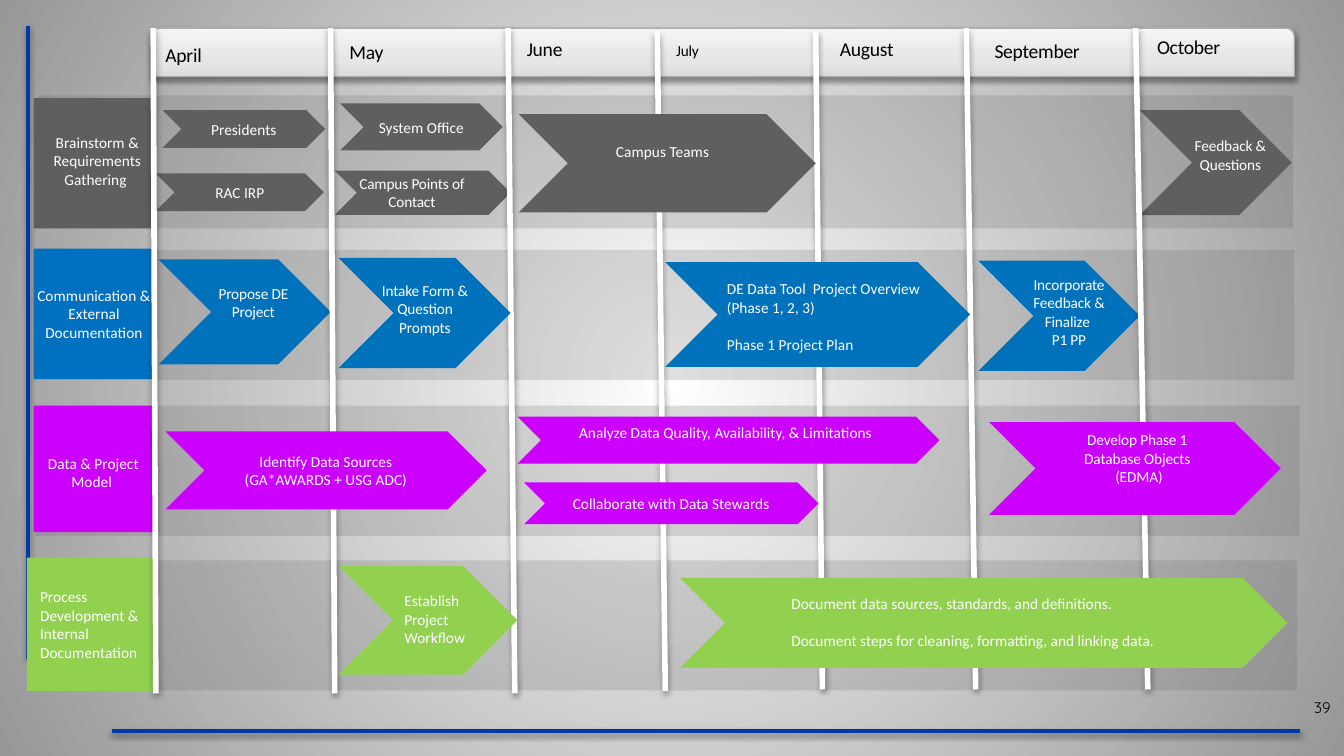
from pptx import Presentation
from pptx.dml.color import RGBColor
from pptx.enum import shapes, text
from pptx.oxml import parse_xml
from pptx.oxml.ns import nsdecls, qn
from pptx.util import Pt

WHITE = RGBColor(0xFF, 0xFF, 0xFF)
BLACK = RGBColor(0, 0, 0)
GREY = RGBColor(0x5F, 0x5F, 0x5F)
BLUE = RGBColor(0x00, 0x72, 0xBC)
LABEL_BLUE = RGBColor(0x00, 0x70, 0xC0)
PURPLE = RGBColor(0xCC, 0x00, 0xFF)
GREEN = RGBColor(0x92, 0xD0, 0x50)
FRAME_BLUE = RGBColor(0x00, 0x38, 0xA8)
HEADER_EDGE = RGBColor(0xAE, 0xAE, 0xAE)

SHAPE = shapes.MSO_SHAPE
LEFT, CENTER, RIGHT = (text.PP_ALIGN.LEFT, text.PP_ALIGN.CENTER, text.PP_ALIGN.RIGHT)
TOP, MIDDLE = text.MSO_ANCHOR.TOP, text.MSO_ANCHOR.MIDDLE
NO_MARGINS = dict.fromkeys(
    ("margin_left", "margin_top", "margin_right", "margin_bottom"), 0)
TIGHT = {"vertical_anchor": MIDDLE, "word_wrap": True, **NO_MARGINS}
TIGHT_TOP = {**TIGHT, "vertical_anchor": TOP}
LOOSE = {"vertical_anchor": TOP, "word_wrap": True}
LOOSE_MIDDLE = {**LOOSE, "vertical_anchor": MIDDLE}
NO_WRAP = {**TIGHT, "word_wrap": False}
BODY_SIZE = 8.25
LINE_HEIGHT = 10

# Row band, label block, label frame, label colour, label, alignment, frame format
ROWS = [
    ((20.2, 51.1, 672.5, 71.3), (18, 52.6, 64.1, 69.8), (20.9, 51.1, 62.6, 69.8),
     GREY, "Brainstorm & Requirements Gathering ", CENTER, TIGHT),
    ((18, 133.9, 675.4, 69.8), (18, 133.2, 64.8, 69.8), None,
     LABEL_BLUE, "Communication & External Documentation", CENTER, TIGHT),
    ((18.7, 217.4, 677.5, 69.8), (18, 217.4, 66.2, 67.7), (18, 229, 64.1, 48.2),
     PURPLE, "Data & Project Model ", CENTER, TIGHT),
    ((17.3, 300.2, 677.5, 69.8), (14.4, 298.8, 67.7, 71.3), None,
     GREEN, "Process Development & Internal Documentation", LEFT, LOOSE_MIDDLE),
]

# Name, frame, size
MONTHS = [
    ("April", (88.6, 22.3, 22.3, 14.4), 10.5),
    ("May", (187.2, 20.9, 18.7, 13.7), 10.5),
    ("June", (282.2, 18.7, 30.2, 14.4), 10.5),
    ("July", (362.2, 17.3, 31.7, 19.4), BODY_SIZE),
    ("August", (450, 18, 31.7, 16.6), 10.5),
    ("September", (532.8, 16.6, 52, 20.9), 10.5),
    ("October", (619.9, 17.3, 43.2, 15.8), 10.5),
]

# Top x, top y, bottom x, bottom y
MONTH_DIVIDERS = [
    (82.1, 15.1, 83.5, 371.5), (177.1, 15.1, 179.3, 371.5),
    (272.2, 15.1, 275.8, 371.5), (352.1, 16.6, 356.4, 370.1),
    (437, 16.6, 440.6, 369.4), (517.7, 15.1, 522.7, 369.4),
    (608.4, 15.1, 614.9, 369.4),
]

# Colour, chevron, text frame (None: inside the chevron), paragraphs,
# alignment, frame format, letter spacing
STEPS_BEHIND_DIVIDERS = [
    (GREY, (87.1, 59, 87.1, 20.2), None, ["Presidents"], CENTER, LOOSE_MIDDLE, 0),
    (GREY, (83.5, 92.9, 90, 20.2), None, ["RAC IRP"], CENTER, LOOSE_MIDDLE, 0),
    (GREY, (182.2, 55.4, 87.1, 25.2), None, ["System Office"], CENTER, LOOSE_MIDDLE, 0),
    (GREY, (179.3, 91.4, 94.3, 23.8), (191.5, 92.9, 58.3, 20.2),
     ["Campus Points of Contact"], CENTER, TIGHT, -0.1),
    (BLUE, (85, 139, 92.2, 56.2), (107.3, 151.9, 56.9, 20.2),
     ["Propose DE Project"], CENTER, TIGHT, -0.1),
    (GREY, (610.6, 59, 81.4, 56.2), (634.3, 72.7, 49.7, 20.2),
     ["Feedback & Questions"], CENTER, TIGHT, -0.1),
    (BLUE, (524.2, 139.7, 86.4, 59), (547.7, 146.9, 50, 40.3),
     ["Incorporate Feedback & Finalize ", "P1 PP"], CENTER, TIGHT, -0.1),
]
STEPS_OVER_DIVIDERS = [
    (PURPLE, (280.8, 258.5, 157.7, 22.3), None,
     ["Collaborate with Data Stewards"], CENTER, LOOSE_MIDDLE, 0),
    (PURPLE, (88.6, 231.1, 172.1, 41.8), None,
     ["Identify Data Sources (GA*AWARDS + USG ADC)"], CENTER, LOOSE_MIDDLE, 0),
    (GREEN, (364.3, 309.6, 325.4, 48.2), (416.9, 314.6, 221, 37.4),
     ["Document data sources, standards, and definitions.", None,
      "Document steps for cleaning, formatting, and linking data."], LEFT, LOOSE, 0),
    (PURPLE, (277.2, 223.2, 226.1, 25.2), (286.6, 223.2, 204.5, 17.3),
     ["Analyze Data Quality, Availability, & Limitations"], CENTER, LOOSE, 0),
    (GREEN, (181.4, 303.1, 95.8, 58.3), (209.5, 313.2, 62.6, 37.4),
     ["Establish Project Workflow"], LEFT, LOOSE, 0),
    (BLUE, (356.4, 140.4, 163.4, 56.2), (382.3, 146.2, 121, 47.5),
     ["DE Data Tool  Project Overview", "(Phase 1, 2, 3)", None,
      "Phase 1 Project Plan"], LEFT, LOOSE, 0),
    (PURPLE, (529.9, 226.1, 156.2, 49.7), (537.1, 230.4, 146.2, 30.2),
     ["Develop Phase 1 ", "Database Objects ", "(EDMA)"], CENTER, TIGHT, -0.1),
    (GREY, (277.9, 61.2, 159.1, 52.6), (305.3, 72.7, 99.4, 17.3),
     ["Campus Teams"], CENTER, LOOSE, 0),
    (BLUE, (181.4, 138.2, 92.2, 59), (202.7, 150.5, 50, 40.3),
     ["Intake Form & Question Prompts"], CENTER, TIGHT_TOP, -0.1),
]


def apply_format(target, values):
    for attribute, value in values.items():
        setattr(target, attribute, value)


def set_gradient(gradient, stops, direction):
    """Replace a gradient's stops and direction; stops are (percent, hex)."""
    for part in list(gradient):
        gradient.remove(part)
    stop_xml = "".join(f'<a:gs pos="{percent * 1000}"><a:srgbClr val="{colour}"/></a:gs>'
                       for percent, colour in stops)
    gradient.append(parse_xml(f"<a:gsLst {nsdecls('a')}>{stop_xml}</a:gsLst>"))
    gradient.append(parse_xml(direction))


def add_shadow(element, opacity):
    element.spPr.append(parse_xml(
        f'<a:effectLst {nsdecls("a")}><a:outerShdw blurRad="{Pt(3.1)}" dist="{Pt(1.6)}" '
        'dir="5400000" rotWithShape="0"><a:srgbClr val="000000">'
        f'<a:alpha val="{opacity * 1000}"/></a:srgbClr></a:outerShdw></a:effectLst>'))


def add_rule(slide, ends, colour, width, opacity):
    rule = slide.shapes.add_connector(shapes.MSO_CONNECTOR.STRAIGHT, *map(Pt, ends))
    rule.line.color.rgb = colour
    rule.line.width = Pt(width)
    add_shadow(rule._element, opacity)


def add_block(slide, preset, frame, colour, opacity=100):
    block = slide.shapes.add_shape(preset, *map(Pt, frame))
    block.shadow.inherit = False
    block.fill.solid()
    block.fill.fore_color.rgb = colour
    block.line.fill.background()
    if opacity < 100:
        block._element.spPr.find(".//" + qn("a:srgbClr")).append(
            parse_xml(f'<a:alpha {nsdecls("a")} val="{opacity * 1000}"/>'))
    return block


def write(holder, paragraphs, align, frame_format, spacing=0,
          size=BODY_SIZE, colour=WHITE, font="Calibri"):
    """Fill a holder with paragraphs; None adds one line of space before the next."""
    frame = holder.text_frame
    apply_format(frame, frame_format)
    paragraph, gap = frame.paragraphs[0], 0
    for index, words in enumerate(paragraphs):
        if words is None:
            gap = LINE_HEIGHT
            continue
        if index:
            paragraph = frame.add_paragraph()
        apply_format(paragraph, {"alignment": align, "space_before": Pt(gap)})
        gap = 0
        run = paragraph.add_run()
        run.text = words
        apply_format(run.font, {"name": font, "size": Pt(size)})
        run.font.color.rgb = colour
        if spacing:
            run.font._element.set("spc", str(round(spacing * 100)))


def add_text(slide, frame, *content, **style):
    write(slide.shapes.add_textbox(*map(Pt, frame)), *content, **style)


def add_step(slide, colour, chevron, text_frame, *content):
    step = add_block(slide, SHAPE.CHEVRON, chevron, colour)
    if text_frame:
        add_text(slide, text_frame, *content)
    else:
        write(step, *content)


def add_header(slide):
    header = add_block(slide, SHAPE.ROUND_2_SAME_RECTANGLE, (81.4, 15.1, 612, 25.9), WHITE)
    header.fill.gradient()
    set_gradient(header._element.spPr.find(qn("a:gradFill")),
                 [(0, "DDDDDD"), (35, "E6E6E6"), (100, "F5F5F5")],
                 f'<a:lin {nsdecls("a")} ang="16200000" scaled="0"/>')
    header.line.color.rgb = HEADER_EDGE
    header.line.width = Pt(0.75)
    header._element.spPr.remove(header._element.spPr.find(qn("a:effectLst")))
    add_shadow(header._element, 38)
    for month, frame, size in MONTHS:
        add_text(slide, frame, [month], LEFT, NO_WRAP, -0.1, size=size, colour=BLACK)


def add_background(slide):
    slide.background.fill.gradient()
    set_gradient(slide._element.find(".//" + qn("a:gradFill")),
                 [(0, "FFFFFF"), (100, "979797")],
                 f'<a:path {nsdecls("a")} path="circle">'
                 '<a:fillToRect l="50000" t="50000" r="50000" b="50000"/></a:path>')


def main():
    deck = Presentation()
    deck.slide_width, deck.slide_height = Pt(720), Pt(405)
    slide = deck.slides.add_slide(deck.slide_layouts[6])
    add_background(slide)
    for ends in ((15.1, 352.8, 15.1, 13.7), (59.8, 391.7, 696.2, 391.7)):
        add_rule(slide, ends, FRAME_BLUE, 2, 38)
    add_text(slide, (676.8, 367.9, 43.2, 21.6), ["39"], RIGHT, LOOSE_MIDDLE,
             colour=BLACK, font="Quicksand")
    for band, *_ in ROWS:
        add_block(slide, SHAPE.RECTANGLE, band, GREY, 20)
    add_header(slide)
    for _, block, label_frame, colour, label, align, frame_format in ROWS:
        label_block = add_block(slide, SHAPE.RECTANGLE, block, colour)
        if label_frame:
            add_text(slide, label_frame, [label], align, frame_format)
        else:
            write(label_block, [label], align, frame_format)
    for step in STEPS_BEHIND_DIVIDERS:
        add_step(slide, *step)
    for ends in MONTH_DIVIDERS:
        add_rule(slide, ends, WHITE, 3, 35)
    for step in STEPS_OVER_DIVIDERS:
        add_step(slide, *step)
    deck.save("out.pptx")


if __name__ == "__main__":
    main()
